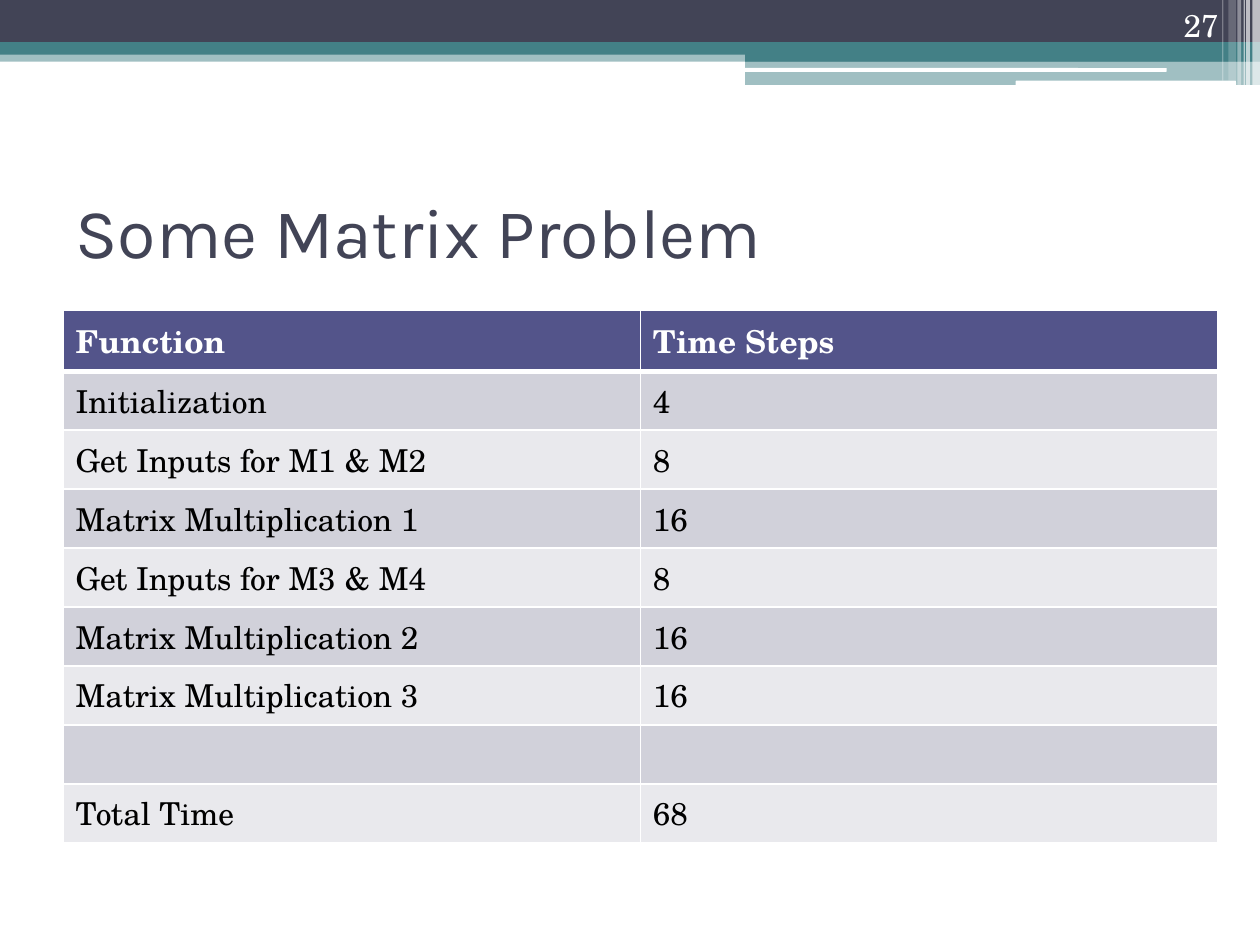
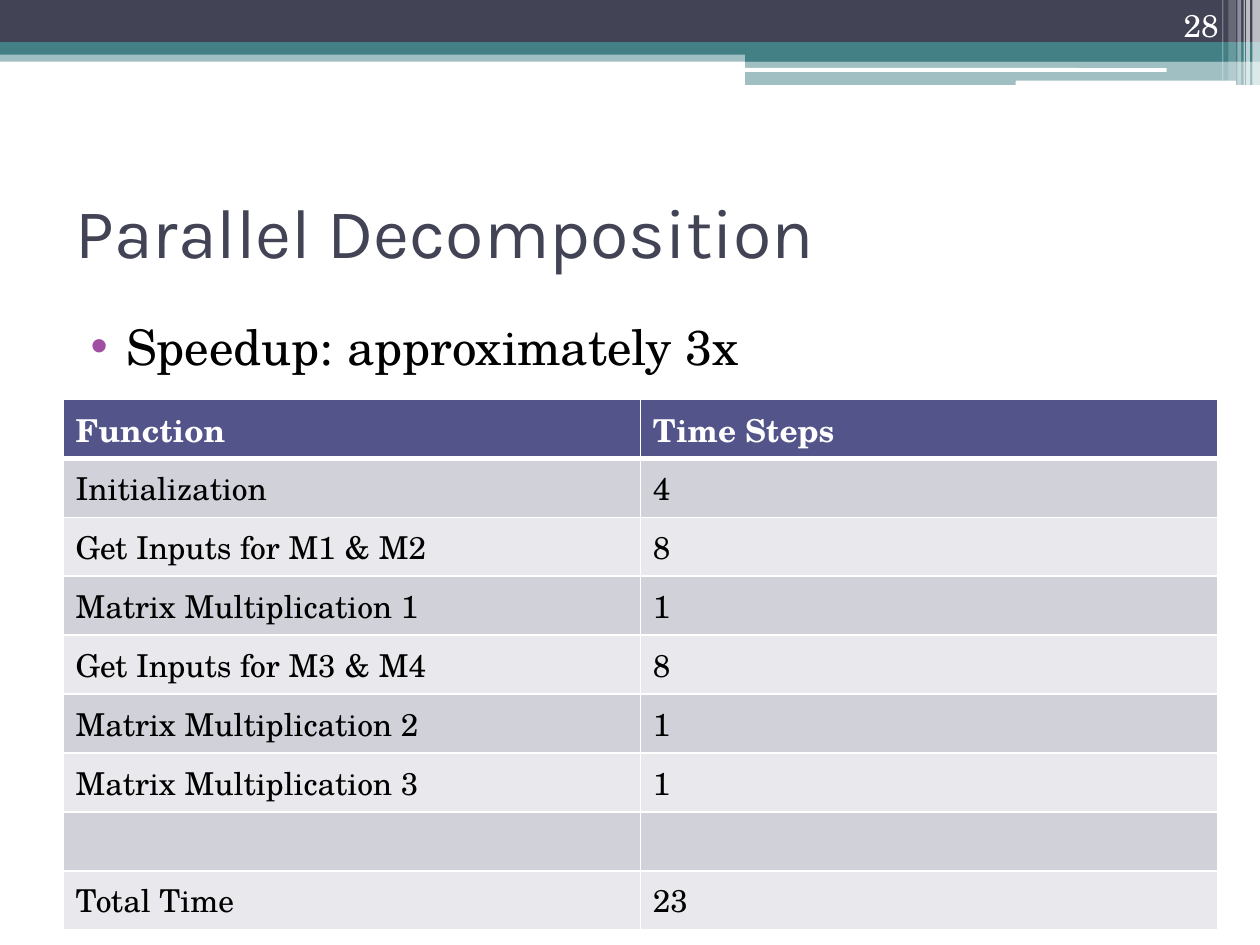
import pptx
import pptx.util
import pptx.dml.color
import pptx.enum.shapes
import pptx.enum.text
import pptx.oxml.ns
from lxml import etree

COLORS = {
    "navy": "424456", "teal": "438086", "white": "FFFFFF", "black": "000000",
    "header": "53548A", "odd": "D1D1DA", "even": "E9E9ED", "bullet": "A04DA3",
}
TITLE_FONT, TEXT_FONT = "Karla", "TeX Gyre Schola"
TEXT_SIZE = 18
GRID_COLS, GRID_ROWS = 100, 75
UNIT = pptx.util.Inches(10) / GRID_COLS
LEFT, BODY_TOP = 5, 24.6
TABLE_WIDTH, TABLE_HEIGHT = 91.65, 42.1

FUNCTIONS = ["Initialization", "Get Inputs for M1 & M2", "Matrix Multiplication 1",
             "Get Inputs for M3 & M4", "Matrix Multiplication 2",
             "Matrix Multiplication 3", "", "Total Time"]
SERIAL_STEPS = ["4", "8", "16", "8", "16", "16", "", "68"]
PARALLEL_STEPS = ["4", "8", "1", "8", "1", "1", "", "23"]

BANDS = [
    (0, 4, 100, 0.9, "teal", 50),
    (0, 0, 100, 3.35, "navy", 100),
    (0, 3.35, 100, 1, "teal", 100),
    (59.15, 3.9, 40.85, 1, "teal", 100),
    (59.15, 4.8, 40.85, 1.95, "teal", 50),
]
HIGHLIGHTS = [(59.1, 5.4, 33.5, 0.3), (80.6, 6.4, 17.5, 0.45)]
STRIPES = [(99.4, 0.6, 6.8, 65), (98.9, 0.3, 6.8, 65), (98.7, 0.1, 6.8, 60),
           (98.2, 0.3, 6.8, 40), (97.5, 0.6, 6.4, 20), (97, 0.1, 6.4, 30)]


def rgb(name):
    return pptx.dml.color.RGBColor.from_string(COLORS[name])


def grid(*lengths):
    return [round(n * UNIT) for n in lengths]


def sub(parent, tag, **attrs):
    return etree.SubElement(parent, pptx.oxml.ns.qn(tag), attrs)


def style(p, font, size, color, bold=False):
    p.font.name, p.font.size, p.font.bold = font, pptx.util.Pt(size), bold
    p.font.color.rgb = rgb(color)


def add_block(s, kind, col, row, cols, rows, color, alpha=100):
    sp = s.shapes.add_shape(kind, *grid(col, row, cols, rows))
    sp.shadow.inherit = False
    sp.fill.solid()
    sp.fill.fore_color.rgb = rgb(color)
    sp.line.fill.background()
    if alpha < 100:
        clr = sp._element.spPr.find(".//" + pptx.oxml.ns.qn("a:srgbClr"))
        sub(clr, "a:alpha", val=str(alpha * 1000))
    return sp


def add_master_bands(prs, s):
    kinds = pptx.enum.shapes.MSO_SHAPE
    blocks = [add_block(s, kinds.RECTANGLE, *band) for band in BANDS]
    blocks += [add_block(s, kinds.ROUNDED_RECTANGLE, *bar, "white") for bar in HIGHLIGHTS]
    blocks += [add_block(s, kinds.RECTANGLE, col, 0, cols, rows, "white", alpha)
               for col, cols, rows, alpha in STRIPES]
    for number, sp in enumerate(blocks, 101):
        sp._element.nvSpPr.cNvPr.set("id", str(number))
        prs.slide_master.shapes._spTree.append(sp._element)


def fill_placeholder(sp, text, box, anchor):
    sp.left, sp.top, sp.width, sp.height = grid(*box)
    tf = sp.text_frame
    tf.text = text
    tf.word_wrap = True
    tf.auto_size = pptx.enum.text.MSO_AUTO_SIZE.NONE
    tf.vertical_anchor = anchor
    p = tf.paragraphs[0]
    p.alignment = pptx.enum.text.PP_ALIGN.LEFT
    return p


def set_title(s, text):
    p = fill_placeholder(s.shapes.title, text, (LEFT, 12.5, 90, 11.6),
                         pptx.enum.text.MSO_ANCHOR.MIDDLE)
    style(p, TITLE_FONT, 40, "navy")


def set_bullet(s, text):
    p = fill_placeholder(s.placeholders[1], text, (LEFT, BODY_TOP, 90, 7.9),
                         pptx.enum.text.MSO_ANCHOR.TOP)
    pPr = p._p.get_or_add_pPr()
    indent, hanging = grid(4, -2.8)
    pPr.set("marL", str(indent))
    pPr.set("indent", str(hanging))
    sub(sub(pPr, "a:buClr"), "a:srgbClr", val=COLORS["bullet"])
    sub(pPr, "a:buChar", char="•")
    p.space_before = pptx.util.Pt(3)
    style(p, TEXT_FONT, 28, "black")


def add_page_number(s, number):
    tf = s.shapes.add_textbox(*grid(89.4, 0, 8.3, 4)).text_frame
    tf.word_wrap = True
    tf.vertical_anchor = pptx.enum.text.MSO_ANCHOR.BOTTOM
    p = tf.paragraphs[0]
    p.text = str(number)
    p.alignment = pptx.enum.text.PP_ALIGN.RIGHT
    style(p, TEXT_FONT, TEXT_SIZE, "white")


def set_borders(cell, top, bottom):
    tcPr = cell._tc.get_or_add_tcPr()
    for side, width in (("L", 1), ("R", 1), ("T", top), ("B", bottom)):
        ln = sub(tcPr, "a:ln" + side, w=str(pptx.util.Pt(width)))
        sub(sub(ln, "a:solidFill"), "a:srgbClr", val=COLORS["white"])


def fill_cell(cell, text, row):
    header = row == 0
    set_borders(cell, 3 if row == 1 else 1, 3 if header else 1)
    cell.fill.solid()
    cell.fill.fore_color.rgb = rgb("header" if header else "odd" if row % 2 else "even")
    p = cell.text_frame.paragraphs[0]
    style(p, TEXT_FONT, TEXT_SIZE, "white" if header else "black", header)
    if text:
        p.text = text
    else:
        end = sub(p._p, "a:endParaRPr", sz=str(TEXT_SIZE * 100))
        sub(end, "a:latin", typeface=TEXT_FONT)


def add_steps_table(s, top, steps):
    rows = [("Function", "Time Steps"), *zip(FUNCTIONS, steps)]
    table = s.shapes.add_table(len(rows), 2,
                               *grid(LEFT, top, TABLE_WIDTH, TABLE_HEIGHT)).table
    for i, row in enumerate(rows):
        for j, text in enumerate(row):
            fill_cell(table.cell(i, j), text, i)


def main():
    prs = pptx.Presentation()
    prs.slide_width, prs.slide_height = grid(GRID_COLS, GRID_ROWS)
    title_and_body, title_only = prs.slide_layouts[1], prs.slide_layouts[5]

    s = prs.slides.add_slide(title_only)
    add_master_bands(prs, s)
    set_title(s, "Some Matrix Problem")
    add_steps_table(s, BODY_TOP, SERIAL_STEPS)
    add_page_number(s, 27)

    s = prs.slides.add_slide(title_and_body)
    set_title(s, "Parallel Decomposition")
    set_bullet(s, "Speedup: approximately 3x")
    add_page_number(s, 28)
    add_steps_table(s, 31.7, PARALLEL_STEPS)

    prs.save("out.pptx")


if __name__ == "__main__":
    main()
